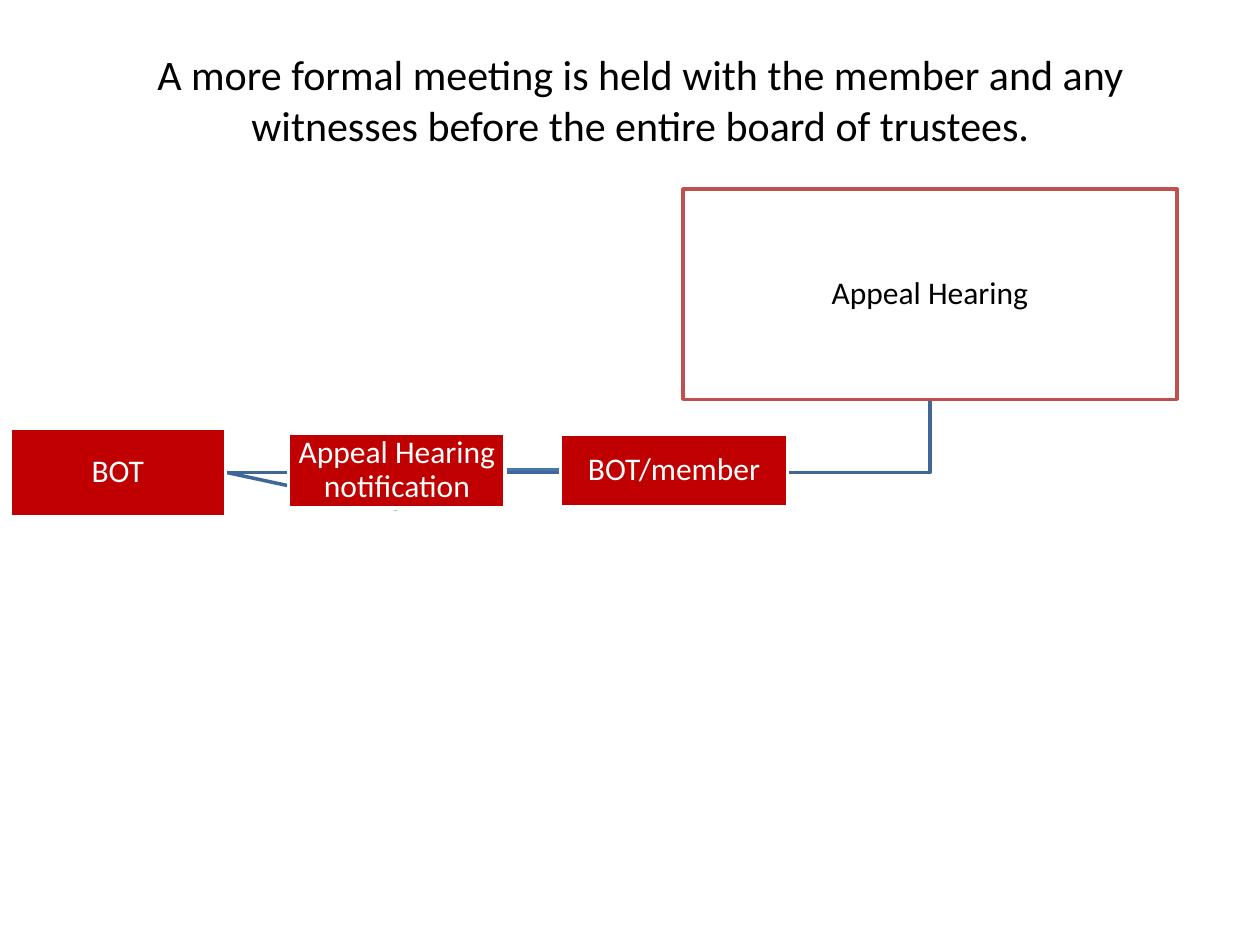
from lxml import etree
from pptx import Presentation
from pptx.dml.color import RGBColor
from pptx.enum.shapes import MSO_CONNECTOR, MSO_SHAPE
from pptx.enum.text import MSO_ANCHOR, PP_ALIGN
from pptx.oxml.ns import qn
from pptx.util import Pt

RECTANGLE = MSO_SHAPE.RECTANGLE
STRAIGHT = MSO_CONNECTOR.STRAIGHT
MIDDLE = MSO_ANCHOR.MIDDLE
CENTER = PP_ALIGN.CENTER
TITLE_ONLY = 5
FONT = "Calibri"
RED, WHITE, BLACK = "C00000", "FFFFFF", "000000"
BRICK, BLUE, LIGHT_BLUE = "C0504D", "3F6797", "4875AC"

TITLE = (
    "A more formal meeting is held with the member and any "
    "witnesses before the entire board of trustees."
)
BOXES = [
    ("BOT", (5.76, 244.8, 123.12, 50.4), RED, WHITE, WHITE),
    ("Appeal Hearing", (390.24, 108, 282.24, 120.24), WHITE, BRICK, BLACK),
    ("Appeal Hearing notification", (164.88, 247.68, 123.84, 42.48), RED, WHITE, WHITE),
    ("BOT/member", (320.4, 248.4, 129.6, 41.04), RED, WHITE, WHITE),
]


def color(value):
    """Return the colour for a hex string."""
    return RGBColor.from_string(value)


def style_line(line, line_color):
    """Give a line its colour and the common width."""
    line.color.rgb = color(line_color)
    line.width = Pt(2)


def format_text(frame, text, size, text_color):
    """Write centred text in the common font."""
    frame.text = text
    frame.word_wrap = True
    frame.vertical_anchor = MIDDLE
    para = frame.paragraphs[0]
    para.alignment = CENTER
    para.font.name = FONT
    para.font.size = Pt(size)
    para.font.color.rgb = color(text_color)
    return para


def add_title(slide):
    """Place the sentence in the title placeholder."""
    title = slide.shapes.title
    title.left, title.top, title.width, title.height = map(Pt, (36, 24, 660, 65.5))
    format_text(title.text_frame, TITLE, 24, BLACK)


def add_box(slide, text, bounds, fill_color, line_color, text_color):
    """Add a labelled step rectangle."""
    box = slide.shapes.add_shape(RECTANGLE, *map(Pt, bounds))
    box.shadow.inherit = False
    box.fill.solid()
    box.fill.fore_color.rgb = color(fill_color)
    style_line(box.line, line_color)
    frame = box.text_frame
    frame.margin_left = frame.margin_right = Pt(0.9)
    frame.margin_top = frame.margin_bottom = Pt(0.9)
    format_text(frame, text, 18, text_color).line_spacing = 0.9


def add_straight_line(slide, start, end, line_color):
    """Add a straight connector without a shadow."""
    connector = slide.shapes.add_connector(STRAIGHT, *map(Pt, start + end))
    style_line(connector.line, line_color)
    etree.SubElement(connector._element.spPr, qn("a:effectLst"))


def add_bent_line(slide, points, line_color):
    """Add an open line through the given points."""
    corners = [(Pt(x), Pt(y)) for x, y in points]
    builder = slide.shapes.build_freeform(*corners[0])
    builder.add_line_segments(corners[1:], close=False)
    shape = builder.convert_to_shape()
    shape.shadow.inherit = False
    shape.fill.background()
    style_line(shape.line, line_color)


def main():
    """Build the appeal hearing slide."""
    deck = Presentation()
    deck.slide_width, deck.slide_height = Pt(720), Pt(540)
    slide = deck.slides.add_slide(deck.slide_layouts[TITLE_ONLY])
    add_title(slide)
    add_bent_line(slide, [(288.72, 269.5), (288.72, 268.5), (320.4, 268.5)], LIGHT_BLUE)
    add_straight_line(slide, (129.6, 270), (226.8, 290.88), BLUE)
    add_bent_line(slide, [(129.6, 270), (531.36, 270), (531.36, 228.24)], BLUE)
    for box in BOXES:
        add_box(slide, *box)
    deck.save("out.pptx")


if __name__ == "__main__":
    main()
